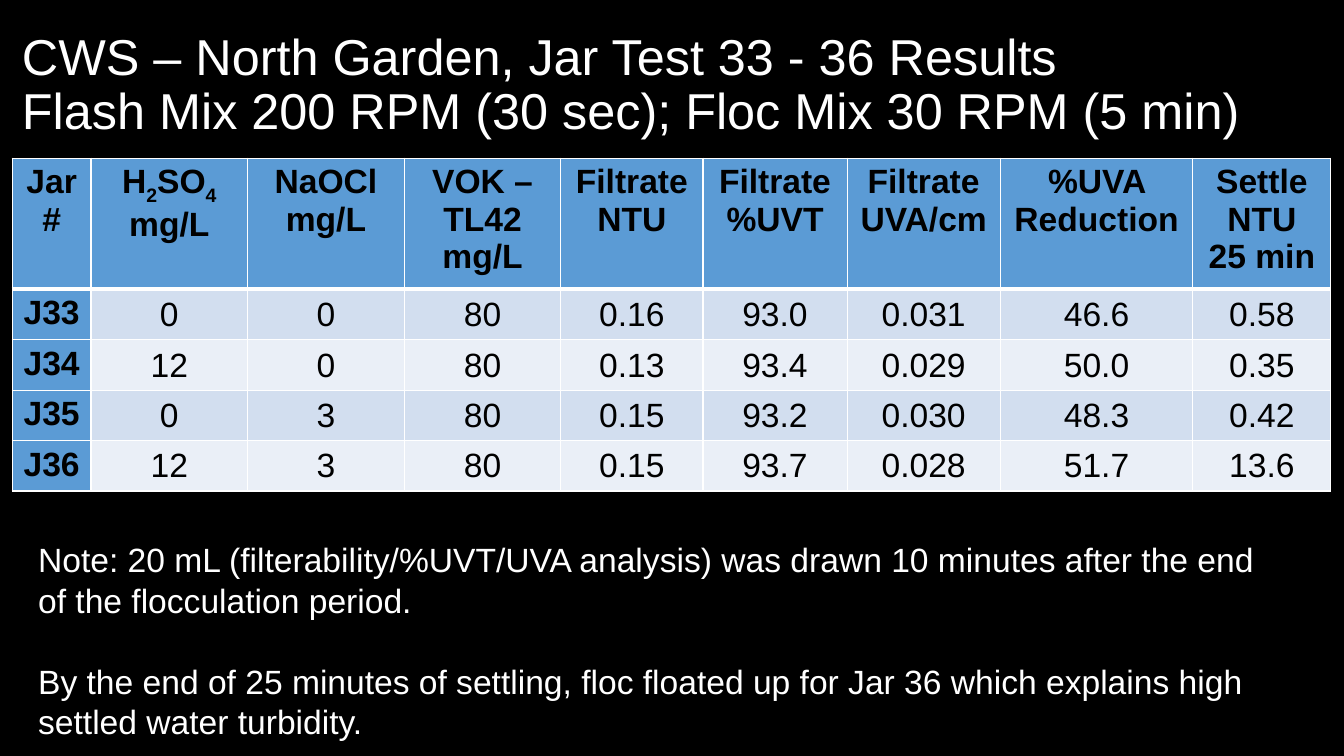
from lxml.etree import SubElement
from pptx import Presentation
from pptx.dml.color import RGBColor
from pptx.enum.text import MSO_ANCHOR as ANCHOR, PP_ALIGN as ALIGN
from pptx.oxml.ns import qn
from pptx.util import Pt

WHITE, BLACK, BLUE = "FFFFFF", "000000", "5B9BD5"
BANDS = ["D2DEEF", "EAEFF7"]


def rgb(value):
    return RGBColor.from_string(value)


def add_run(p, text, size, color, bold=False):
    r = p.add_run()
    r.text = text
    r.font.name = "Arial"
    r.font.size = Pt(size)
    r.font.bold = bold
    r.font.color.rgb = rgb(color)
    return r


prs = Presentation()
prs.slide_width, prs.slide_height = Pt(960), Pt(540)
s = prs.slides.add_slide(prs.slide_layouts[6])
s.background.fill.solid()
s.background.fill.fore_color.rgb = rgb(BLACK)

tf = s.shapes.add_textbox(Pt(8.64), Pt(9.36), Pt(938.16), Pt(104.4)).text_frame
tf.word_wrap = True
tf.vertical_anchor = ANCHOR.MIDDLE
p = tf.paragraphs[0]
p.line_spacing = 0.9
add_run(p, "CWS – North Garden, Jar Test 33 - 36 Results", 36, WHITE)
p.add_line_break()
add_run(p, "Flash Mix 200 RPM (30 sec); Floc Mix 30 RPM (5 min)", 36, WHITE)

headers = [
    [["Jar#"]],
    [["H", "2", "SO", "4"], ["mg/L"]],
    [["NaOCl"], ["mg/L"]],
    [["VOK – TL42"], ["mg/L"]],
    [["Filtrate"], ["NTU"]],
    [["Filtrate"], ["%UVT"]],
    [["Filtrate"], ["UVA/cm"]],
    [["%UVA Reduction"]],
    [["Settle"], ["NTU"], ["25 min"]],
]
results = [
    ["J33", "0", "0", "80", "0.16", "93.0", "0.031", "46.6", "0.58"],
    ["J34", "12", "0", "80", "0.13", "93.4", "0.029", "50.0", "0.35"],
    ["J35", "0", "3", "80", "0.15", "93.2", "0.030", "48.3", "0.42"],
    ["J36", "12", "3", "80", "0.15", "93.7", "0.028", "51.7", "13.6"],
]
rows = [headers] + [[[[value]] for value in jar] for jar in results]
widths = [56.2, 111.9, 111.9, 111.9, 101.5, 103, 109.4, 137.6, 98.6]
row_height = 29.5

table = s.shapes.add_table(len(rows), len(widths), Pt(8.8), Pt(113),
                           Pt(sum(widths)), Pt(row_height * len(rows))).table
for column, width in zip(table.columns, widths):
    column.width = Pt(width)
for row in table.rows:
    row.height = Pt(row_height)

for i, row in enumerate(rows):
    for j, lines in enumerate(row):
        cell = table.cell(i, j)
        heading = i == 0 or j == 0
        tcPr = cell._tc.get_or_add_tcPr()
        for side, weight in [("L", 1), ("R", 1), ("T", 1), ("B", 3 if i == 0 else 1)]:
            ln = SubElement(tcPr, qn("a:ln" + side), w=str(Pt(weight)))
            SubElement(SubElement(ln, qn("a:solidFill")), qn("a:srgbClr"), val=WHITE)
        cell.fill.solid()
        cell.fill.fore_color.rgb = rgb(BLUE if heading else BANDS[(i - 1) % 2])
        if not heading:
            cell.vertical_anchor = ANCHOR.MIDDLE
            cell.margin_left = cell.margin_right = cell.margin_top = Pt(0.7)
            cell.margin_bottom = Pt(0)
        tf = cell.text_frame
        for k, parts in enumerate(lines):
            p = tf.add_paragraph() if k else tf.paragraphs[0]
            p.alignment = ALIGN.CENTER
            for n, part in enumerate(parts):
                r = add_run(p, part, 24, BLACK, heading)
                if n % 2:
                    r.font._element.set("baseline", "-25000")

notes = [
    ("Note: 20 mL (filterability/%UVT/UVA analysis) was drawn 10 minutes after the end", 0),
    ("of the flocculation period.", 0),
    ("By the end of 25 minutes of settling, floc floated up for Jar 36 which explains high", 29),
    ("settled water turbidity.", 0),
]
tf = s.shapes.add_textbox(Pt(20.16), Pt(381.6), Pt(898.56), Pt(152.64)).text_frame
tf.word_wrap = True
for k, (line, gap) in enumerate(notes):
    p = tf.add_paragraph() if k else tf.paragraphs[0]
    p.space_before = Pt(gap)
    add_run(p, line, 24, WHITE)

prs.save("out.pptx")
